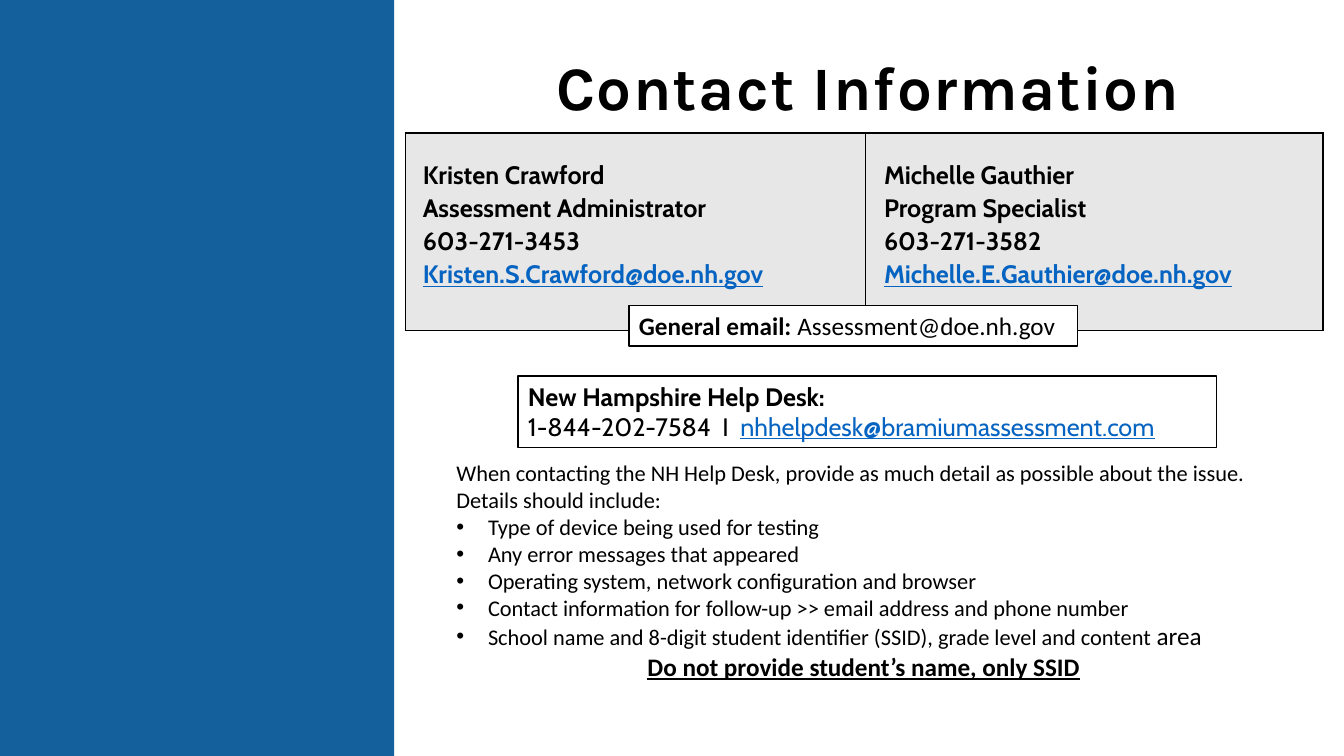
from dataclasses import dataclass

import pptx
import pptx.dml.color
import pptx.enum.shapes
import pptx.enum.text
import pptx.oxml
import pptx.oxml.ns
import pptx.util
from pptx.util import Pt

COLORS = {
    "panel": "14609D",
    "cell": "E7E7E7",
    "text": "000000",
    "link": "0563C1",
    "white": "FFFFFF",
}
BULLET_INDENT = 22.5


@dataclass
class TextRun:
    text: str
    size: float = 18
    font: str = "Cabin"
    bold: bool = False
    underline: bool = False
    color: str = "text"


@dataclass
class Line:
    runs: list[TextRun]
    bullet: bool = False
    centered: bool = False
    spacing: float = 1.0


@dataclass
class Box:
    left: float
    top: float
    width: float
    height: float
    lines: list[Line]
    framed: bool = True


@dataclass
class Contact:
    details: list[str]
    email: str
    margin_left: float
    column_width: float


def rgb(name: str) -> pptx.dml.color.RGBColor:
    return pptx.dml.color.RGBColor.from_string(COLORS[name])


def add_xml(parent, markup: str) -> None:
    """Append a DrawingML element written with the a: prefix."""
    opening, rest = markup.split(" ", 1)
    namespace = pptx.oxml.ns.nsdecls("a")
    parent.append(pptx.oxml.parse_xml(f"{opening} {namespace} {rest}"))


def write_lines(text_frame, lines: list[Line]) -> None:
    for index, line in enumerate(lines):
        paragraph = text_frame.paragraphs[0] if index == 0 else text_frame.add_paragraph()
        alignment = pptx.enum.text.PP_ALIGN
        paragraph.alignment = alignment.CENTER if line.centered else alignment.LEFT
        paragraph.line_spacing = line.spacing
        if line.bullet:
            properties = paragraph._p.get_or_add_pPr()
            properties.set("marL", str(Pt(BULLET_INDENT)))
            properties.set("indent", str(-Pt(BULLET_INDENT)))
            add_xml(properties, '<a:buFont typeface="Arial"/>')
            add_xml(properties, '<a:buChar char="•"/>')
        for item in line.runs:
            run = paragraph.add_run()
            run.text = item.text
            run.font.name = item.font
            run.font.size = Pt(item.size)
            run.font.bold = item.bold
            run.font.underline = item.underline
            run.font.color.rgb = rgb(item.color)


def add_rectangle(slide, left: float, top: float, width: float, height: float, fill: str):
    shape = slide.shapes.add_shape(
        pptx.enum.shapes.MSO_SHAPE.RECTANGLE, Pt(left), Pt(top), Pt(width), Pt(height)
    )
    shape.shadow.inherit = False
    shape.fill.solid()
    shape.fill.fore_color.rgb = rgb(fill)
    shape.line.fill.background()
    return shape


def add_box(slide, box: Box) -> None:
    place = (box.left, box.top, box.width, box.height)
    if box.framed:
        shape = add_rectangle(slide, *place, "white")
        shape.line.color.rgb = rgb("text")
        shape.line.width = Pt(1)
    else:
        shape = slide.shapes.add_textbox(*map(Pt, place))
    shape.text_frame.word_wrap = True
    shape.text_frame.vertical_anchor = pptx.enum.text.MSO_ANCHOR.TOP
    write_lines(shape.text_frame, box.lines)


def add_contacts(slide, contacts: list[Contact]) -> None:
    width = sum(contact.column_width for contact in contacts)
    frame = slide.shapes.add_table(1, len(contacts), Pt(289.5), Pt(95), Pt(width), Pt(141))
    table = frame.table
    for index, contact in enumerate(contacts):
        table.columns[index].width = Pt(contact.column_width)
        cell = table.cell(0, index)
        cell.margin_left, cell.margin_right = Pt(contact.margin_left), Pt(5)
        cell.margin_top, cell.margin_bottom = Pt(18.2), Pt(0)
        lines = [Line([TextRun(text, bold=True)], spacing=1.07) for text in contact.details]
        email = TextRun(contact.email, bold=True, underline=True, color="link")
        write_lines(cell.text_frame, lines + [Line([email], spacing=1.07)])
        properties = cell._tc.get_or_add_tcPr()
        for side in ("lnL", "lnR", "lnT", "lnB"):
            add_xml(
                properties,
                f'<a:{side} w="{Pt(1)}"><a:solidFill>'
                f'<a:srgbClr val="{COLORS["text"]}"/></a:solidFill></a:{side}>',
            )
        cell.fill.solid()
        cell.fill.fore_color.rgb = rgb("cell")


def add_title(slide) -> None:
    title = slide.shapes.title
    title.left, title.top, title.width, title.height = Pt(289.5), Pt(13.5), Pt(661), Pt(78.5)
    title.text_frame.word_wrap = True
    title.text_frame.vertical_anchor = pptx.enum.text.MSO_ANCHOR.BOTTOM
    heading = TextRun("Contact Information", size=44.1, font="Karla", bold=True)
    write_lines(title.text_frame, [Line([heading], centered=True, spacing=0.9)])
    title.text_frame.paragraphs[0].runs[0].font._element.set("spc", "100")


def body_run(text: str, size: float = 16, strong: bool = False) -> TextRun:
    return TextRun(text, size, "Calibri", bold=strong, underline=strong)


CONTACTS = [
    Contact(
        ["Kristen Crawford", "Assessment Administrator", "603-271-3453"],
        "Kristen.S.Crawford@doe.nh.gov", 12.5, 328.5,
    ),
    Contact(
        ["Michelle Gauthier", "Program Specialist", "603-271-3582"],
        "Michelle.E.Gauthier@doe.nh.gov", 13.5, 327,
    ),
]
DETAILS = [
    [body_run("Type of device being used for testing")],
    [body_run("Any error messages that appeared")],
    [body_run("Operating system, network configuration and browser")],
    [body_run("Contact information for follow-up >> email address and phone number")],
    [
        body_run("School name and 8-digit student identifier (SSID), grade level and content "),
        body_run("area", 18),
    ],
]
INTRODUCTION = (
    "When contacting the NH Help Desk, provide as much detail as possible "
    "about the issue. Details should include:"
)
BOXES = [
    Box(370, 268.5, 499, 51, [
        Line([TextRun("New Hampshire Help Desk:", bold=True)]),
        Line([
            TextRun("1-844-202-7584  I  "),
            TextRun("nhhelpdesk@bramiumassessment.com", underline=True, color="link"),
        ]),
    ]),
    Box(319, 324.7, 596, 167, [
        Line([body_run(INTRODUCTION)]),
        *[Line(runs, bullet=True) for runs in DETAILS],
        Line([body_run("Do not provide student’s name, only SSID", 18, True)], centered=True),
    ], framed=False),
    Box(449.3, 218.2, 320.4, 29, [
        Line([
            TextRun("General email: ", font="Calibri", bold=True),
            TextRun("Assessment@doe.nh.gov", font="Calibri"),
        ]),
    ]),
]


def main() -> None:
    presentation = pptx.Presentation()
    presentation.slide_width, presentation.slide_height = Pt(960), Pt(540)
    slide = presentation.slides.add_slide(presentation.slide_layouts[5])
    add_rectangle(slide, 0, 0, 281.5, 540, "panel")
    add_title(slide)
    add_contacts(slide, CONTACTS)
    for box in BOXES:
        add_box(slide, box)
    presentation.save("out.pptx")


if __name__ == "__main__":
    main()
